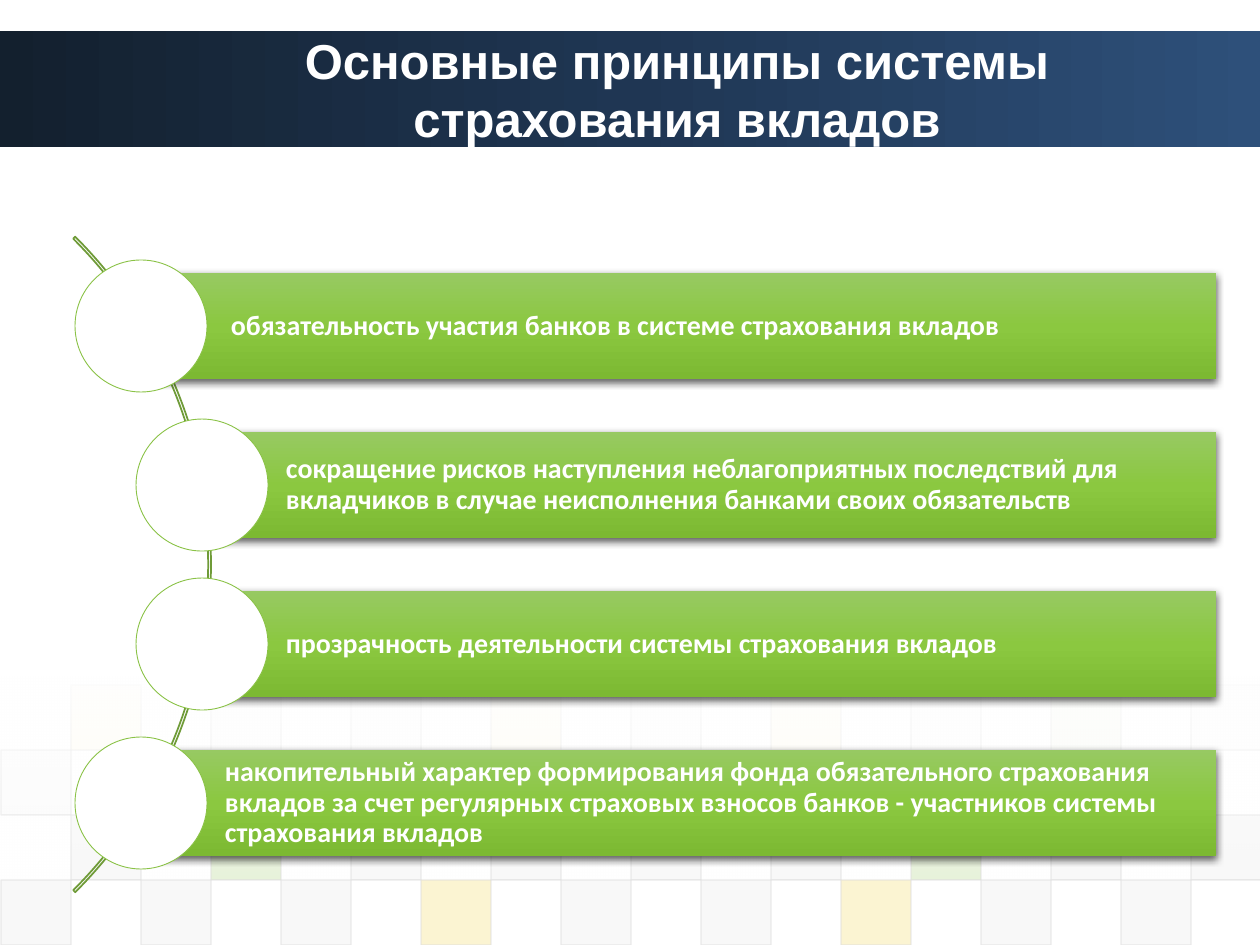
from lxml import etree
from pptx import Presentation
from pptx import util as u
from pptx.dml.color import RGBColor
from pptx.enum import shapes, text
from pptx.oxml import ns

COLORS = {
    "white": "FFFFFF", "black": "000000",
    "navy_dark": "13202E", "navy": "1F3653", "navy_light": "2E507A",
    "D": "DDDDDD", "E": "EAEAEA", "G": "8AC246", "Y": "EFC821",
    "bar_top": "97C962", "bar_mid": "8BC840", "bar_end": "7CB932",
    "arc": "6F9B38",
}
EMU_PER_PX = 914400 / 126


def px(n):
    return u.Emu(round(n * EMU_PER_PX))


def rgb(name):
    return RGBColor.from_string(COLORS[name])


def sub(parent, tag, **attrs):
    return etree.SubElement(parent, ns.qn(tag), {k: str(v) for k, v in attrs.items()})


def color_xml(parent, name, alpha):
    clr = sub(parent, "a:srgbClr", val=COLORS[name])
    sub(clr, "a:alpha", val=alpha * 1000)


class Deck:
    def __init__(self, width, height):
        self.prs = Presentation()
        self.prs.slide_width, self.prs.slide_height = px(width), px(height)
        self.s = self.prs.slides.add_slide(self.prs.slide_layouts[6])

    def shape(self, kind, x, y, w, h, fill=None, line=None, weight=0.75):
        sp = self.s.shapes.add_shape(kind, px(x), px(y), px(w), px(h))
        sp.shadow.inherit = False
        if fill:
            sp.fill.solid()
            sp.fill.fore_color.rgb = rgb(fill)
        else:
            sp.fill.background()
        if line:
            sp.line.color.rgb = rgb(line)
            sp.line.width = u.Pt(weight)
        else:
            sp.line.fill.background()
        return sp

    def gradient_rect(self, x, y, w, h, stops, angle):
        sp = self.shape(shapes.MSO_SHAPE.RECTANGLE, x, y, w, h)
        spPr = sp._element.spPr
        grad = etree.Element(ns.qn("a:gradFill"), rotWithShape="1")
        gs_lst = sub(grad, "a:gsLst")
        for pos, name, alpha in stops:
            color_xml(sub(gs_lst, "a:gs", pos=pos * 1000), name, alpha)
        sub(grad, "a:lin", ang=angle * 60000, scaled=0)
        spPr.replace(spPr.find(ns.qn("a:noFill")), grad)
        return sp

    def drop_shadow(self, sp):
        effects = sp._element.spPr.find(ns.qn("a:effectLst"))
        shadow = sub(effects, "a:outerShdw", blurRad=u.Pt(4.5), dist=u.Pt(1.5),
                     dir=90 * 60000, rotWithShape=0)
        color_xml(shadow, "black", 63)

    def label(self, sp, words, font, size, align, insets, spacing=1.0):
        tf = sp.text_frame
        tf.word_wrap = True
        tf.vertical_anchor = text.MSO_ANCHOR.MIDDLE
        tf.margin_left, tf.margin_top, tf.margin_right, tf.margin_bottom = map(px, insets)
        tf.text = words
        p = tf.paragraphs[0]
        p.alignment = align
        p.line_spacing = spacing
        f = p.runs[0].font
        f.name, f.size, f.bold = font, u.Pt(size), True
        f.color.rgb = rgb("white")

    def title(self, words, x, y, w, h):
        sp = self.s.shapes.add_textbox(px(x), px(y), px(w), px(h))
        self.label(sp, words, "Arial", 28, text.PP_ALIGN.CENTER, (12, 6, 12, 6))

    def tile(self, x, y, color, alpha):
        sp = self.shape(shapes.MSO_SHAPE.RECTANGLE, x, y, 70, 65, color, "D")
        fill_clr, line_clr = sp._element.spPr.iter(ns.qn("a:srgbClr"))
        sub(fill_clr, "a:alpha", val=alpha * 1000)
        sub(line_clr, "a:alpha", val=60000)

    def arc(self, x, y, size):
        sp = self.shape(shapes.MSO_SHAPE.BLOCK_ARC, x, y, size, size, None, "arc", 1)
        for i, value in enumerate((189, 27, 0.003)):
            sp.adjustments[i] = value

    def principle(self, x, y, words, inset):
        right, height, dot = 1216, 106, 132
        stops = [(0, "bar_top", 100), (50, "bar_mid", 100), (100, "bar_end", 100)]
        bar = self.gradient_rect(x, y, right - x, height, stops, 90)
        self.drop_shadow(bar)
        self.label(bar, words, "Calibri", 16, text.PP_ALIGN.LEFT, (inset, 5, 5, 5), 0.9)
        self.shape(shapes.MSO_SHAPE.OVAL, x - dot // 2, y + (height - dot) // 2,
                   dot, dot, "white", "G", 0.5)


def main():
    d = Deck(1260, 945)
    d.gradient_rect(0, 31, 1260, 116,
                    [(0, "navy_dark", 100), (50, "navy", 100), (100, "navy_light", 100)], 0)

    tile_rows = [("YEEYDYEGE", 1, 5), ("DDDDGDDDY", 0, 10),
                 ("DGDDDDGDD", 1, 20), ("DDDYDDYDD", 0, 20)]
    for row, (colors, first, alpha) in enumerate(tile_rows):
        for i, color in enumerate(colors):
            d.tile(1 + 70 * (first + 2 * i), 685 + 65 * row, color, alpha)
    d.gradient_rect(0, 677, 1260, 204, [(0, "white", 90), (100, "white", 0)], 90)

    d.title("Основные принципы системы страхования вкладов", 168, 31, 1018, 116)

    d.arc(-716, 101, 927)
    principles = [
        (141, "обязательность участия банков в системе страхования вкладов", 90),
        (202, "сокращение рисков наступления неблагоприятных последствий для "
              "вкладчиков в случае неисполнения банками своих обязательств", 84),
        (202, "прозрачность деятельности системы страхования вкладов", 84),
        (141, "накопительный характер формирования фонда обязательного страхования "
              "вкладов за счет регулярных страховых взносов банков - участников "
              "системы страхования вкладов", 84),
    ]
    for i, (x, words, inset) in enumerate(principles):
        d.principle(x, 273 + 159 * i, words, inset)

    d.prs.save("out.pptx")


if __name__ == "__main__":
    main()
